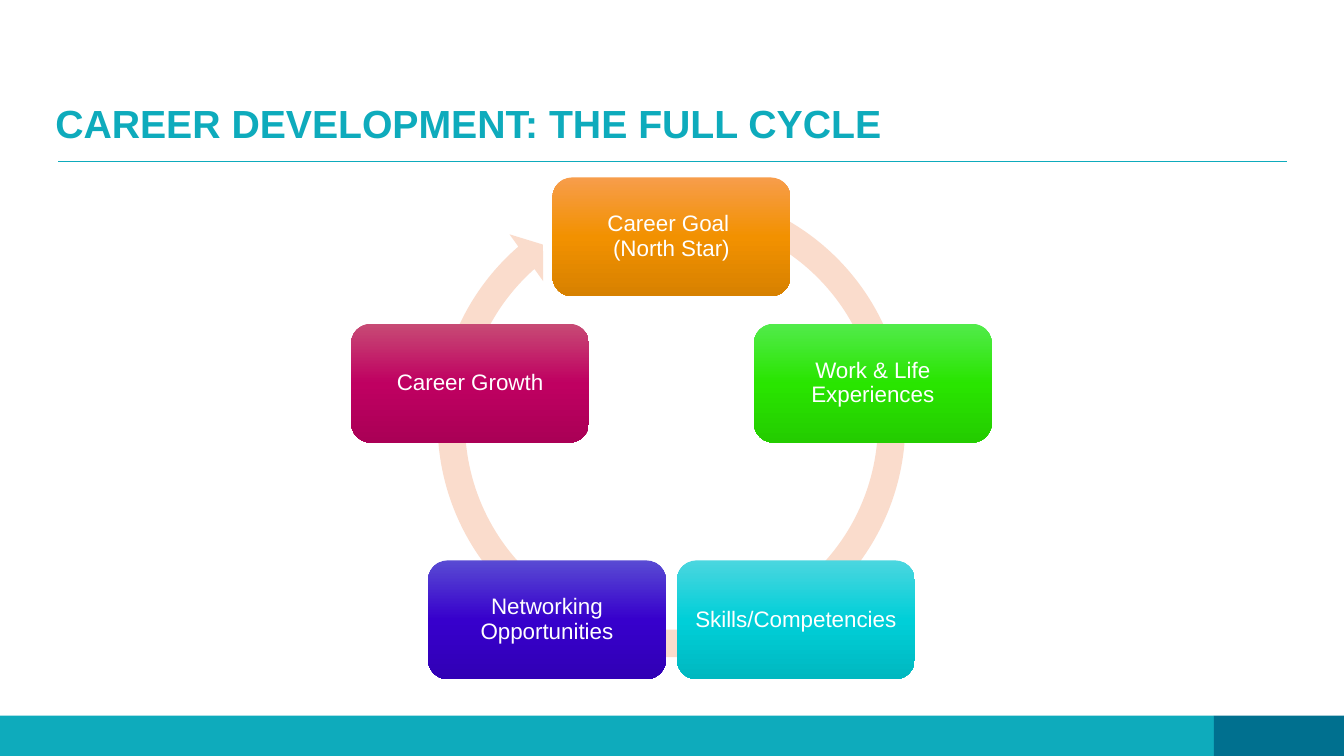
import copy
import math
from lxml import etree
from pptx import Presentation
from pptx import util as u
from pptx.dml.color import RGBColor
from pptx.enum import shapes, text
from pptx.oxml.ns import qn


def color(value):
    return RGBColor.from_string(value)


def write(shape, words, font, paragraph, frame):
    shape.text_frame.word_wrap = True
    for name, value in frame.items():
        setattr(shape.text_frame, name, value)
    para = shape.text_frame.paragraphs[0]
    para.text = words
    for name, value in paragraph.items():
        setattr(para, name, value)
    for span in para.runs:
        span.font.color.rgb = color(font["color"])
        for name in ("name", "size", "bold"):
            setattr(span.font, name, font[name])


deck = Presentation()
deck.slide_width = u.Inches(13.33)
deck.slide_height = u.Inches(7.5)
page = deck.slides.add_slide(deck.slide_layouts[6])

for left, width, fill in [(0, 12.04, "0EABBC"), (12.04, 1.29, "00708F")]:
    band = page.shapes.add_shape(
        shapes.MSO_SHAPE.RECTANGLE,
        u.Inches(left), u.Inches(7.1), u.Inches(width), u.Inches(0.4))
    band.shadow.inherit = False
    band.fill.solid()
    band.fill.fore_color.rgb = color(fill)
    band.line.fill.background()

rule = page.shapes.add_connector(
    shapes.MSO_CONNECTOR.STRAIGHT,
    u.Inches(0.58), u.Inches(1.6), u.Inches(12.76), u.Inches(1.6))
rule.line.color.rgb = color("0EABBC")
rule.line.width = u.Pt(0.5)
etree.SubElement(rule._element.spPr, qn("a:effectLst"))

title = page.shapes.add_textbox(
    u.Inches(0.45), u.Inches(0.4), u.Inches(12.43), u.Inches(1.11))
write(
    title, "CAREER DEVELOPMENT: THE FULL CYCLE",
    {"name": "Arial", "size": u.Pt(28), "bold": True, "color": "0EABBC"},
    {"line_spacing": 0.9},
    {"vertical_anchor": text.MSO_ANCHOR.BOTTOM})

cycle = page.shapes.add_shape(
    shapes.MSO_SHAPE.CIRCULAR_ARROW,
    u.Inches(4.19), u.Inches(1.73), u.Inches(4.94), u.Inches(4.94))
for index, value in enumerate([0.055, 3.307, 137.266, 174.16, 0.058]):
    cycle.adjustments[index] = value
cycle.shadow.inherit = False
cycle.fill.solid()
cycle.fill.fore_color.rgb = color("FADCCC")
cycle.line.fill.background()

stages = [
    ("Career Goal \n(North Star)", ["F79D4B", "F29100", "D78100"]),
    ("Work & Life Experiences", ["52EB4B", "29E500", "24CC00"]),
    ("Skills/Competencies", ["4BD6DF", "00CFD8", "00B8C0"]),
    ("Networking Opportunities", ["594BD3", "3700CC", "3100B5"]),
    ("Career Growth", ["C74B75", "BF0061", "AA0056"]),
]
center_x, center_y, radius = 6.66, 4.45, 2.1
box_width, box_height = 2.36, 1.18
inset = u.Inches(0.07)

for index, (words, shades) in enumerate(stages):
    angle = math.tau * index / len(stages)
    box = page.shapes.add_shape(
        shapes.MSO_SHAPE.ROUNDED_RECTANGLE,
        u.Inches(center_x + radius * math.sin(angle) - box_width / 2),
        u.Inches(center_y - radius * math.cos(angle) - box_height / 2),
        u.Inches(box_width), u.Inches(box_height))
    box.shadow.inherit = False
    box.line.fill.background()
    box.fill.gradient()
    box.fill.gradient_angle = 270
    stops = box._element.spPr.find(".//" + qn("a:gsLst"))
    stops.insert(1, copy.deepcopy(stops[0]))
    for stop, position, shade in zip(box.fill.gradient_stops, [0, 0.5, 1], shades):
        stop.position = position
        stop.color.rgb = color(shade)
    write(
        box, words,
        {"name": "Arial", "size": u.Pt(16), "bold": False, "color": "FFFFFF"},
        {"line_spacing": 0.9, "alignment": text.PP_ALIGN.CENTER},
        {"vertical_anchor": text.MSO_ANCHOR.MIDDLE,
         "margin_left": inset, "margin_right": inset,
         "margin_top": inset, "margin_bottom": inset})

deck.save("out.pptx")
